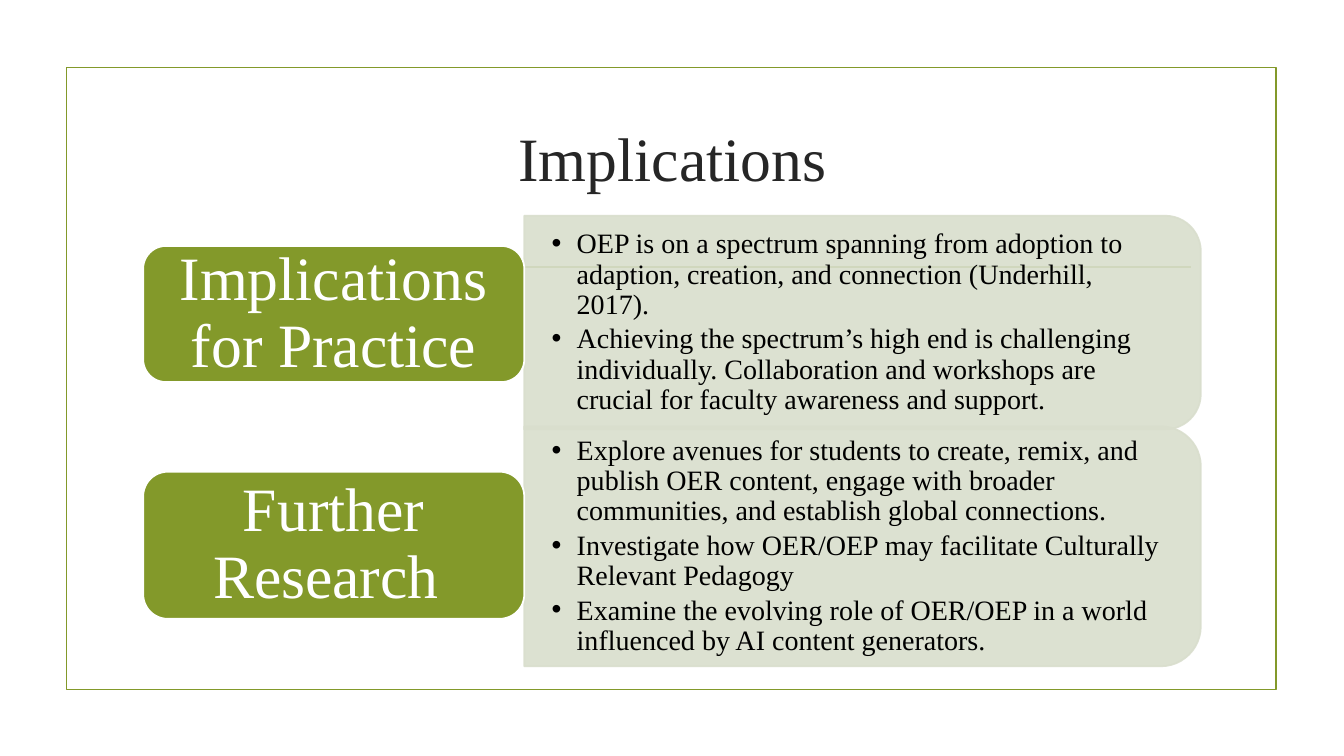
from lxml.etree import SubElement
from pptx import Presentation
from pptx.dml.color import RGBColor
from pptx.enum.shapes import MSO_CONNECTOR as CONNECTOR, MSO_SHAPE as SHAPE
from pptx.enum.text import MSO_ANCHOR as ANCHOR, PP_ALIGN as ALIGN
from pptx.oxml.ns import qn
from pptx.util import Pt

PX = 9144  # 100 px to the inch
FONT = "Times New Roman"
COLORS = {"green": "83992A", "sage": "D9DECD", "white": "FFFFFF",
          "title": "262626", "body": "000000"}

# label, label top and height, panel top and height, points
TOPICS = [
    ("Implications for Practice", 244, 135, 214, 212, [
        "OEP is on a spectrum spanning from adoption to adaption, creation, "
        "and connection (Underhill, 2017).",
        "Achieving the spectrum’s high end is challenging individually. "
        "Collaboration and workshops are crucial for faculty awareness and support."]),
    ("Further Research ", 468, 146, 423, 238, [
        "Explore avenues for students to create, remix, and publish OER content, "
        "engage with broader communities, and establish global connections.",
        "Investigate how OER/OEP may facilitate Culturally Relevant Pedagogy",
        "Examine the evolving role of OER/OEP in a world influenced by AI "
        "content generators."]),
]


def px(*lengths):
    return [round(length * PX) for length in lengths]


def rgb(name):
    return RGBColor.from_string(COLORS[name])


def set_line(line, color):
    line.color.rgb = rgb(color)
    line.width = Pt(1.25)


def add_block(slide, kind, box, fill, line):
    block = slide.shapes.add_shape(kind, *px(*box))
    block.shadow.inherit = False
    if fill:
        block.fill.solid()
        block.fill.fore_color.rgb = rgb(fill)
    else:
        block.fill.background()
    set_line(block.line, line)
    return block


def set_frame(frame, side=10, end=5):
    frame.word_wrap = True
    frame.vertical_anchor = ANCHOR.MIDDLE
    frame.margin_left, frame.margin_right, frame.margin_top, frame.margin_bottom = px(
        side, side, end, end)


def set_font(paragraph, size, color):
    paragraph.font.size = Pt(size)
    paragraph.font.name = FONT
    paragraph.font.color.rgb = rgb(color)


def add_backdrop(slide, box):
    left, top, width, _ = box
    add_block(slide, SHAPE.RECTANGLE, box, None, "green")
    rule = slide.shapes.add_connector(
        CONNECTOR.STRAIGHT, *px(left + 87, top + 198, left + width - 85, top + 198))
    set_line(rule.line, "green")
    SubElement(rule._element.spPr, qn("a:effectLst"))


def add_title(slide, box, text):
    frame = slide.shapes.add_textbox(*px(*box)).text_frame
    set_frame(frame)
    title = frame.paragraphs[0]
    title.text = text
    title.alignment = ALIGN.CENTER
    set_font(title, 44, "title")


def add_panel(slide, box, points):
    left, top, width, height = box
    # The round end faces right after a quarter turn about the centre
    shift = (width - height) / 2
    panel = add_block(slide, SHAPE.ROUND_2_SAME_RECTANGLE,
                      (left + shift, top - shift, height, width), "sage", "sage")
    panel.rotation = 90
    for color in panel._element.spPr.iter(qn("a:srgbClr")):
        SubElement(color, qn("a:alpha"), val="90000")

    # Bulleted points
    frame = slide.shapes.add_textbox(*px(left, top + 10, width - 10, height - 20)).text_frame
    set_frame(frame, 27, 14)
    for index, text in enumerate(points):
        point = frame.add_paragraph() if index else frame.paragraphs[0]
        point.text = text
        point.line_spacing = 0.9
        point.space_after = Pt(3)
        properties = point._p.get_or_add_pPr()
        properties.set("marL", str(25 * PX))
        properties.set("indent", str(-25 * PX))
        SubElement(properties, qn("a:buFont"), typeface="Arial")
        SubElement(properties, qn("a:buChar"), char="•")
        set_font(point, 20, "body")


def add_label(slide, box, text):
    frame = add_block(slide, SHAPE.ROUNDED_RECTANGLE, box, "green", "white").text_frame
    set_frame(frame, 18, 9)
    label = frame.paragraphs[0]
    label.text = text
    label.alignment = ALIGN.CENTER
    label.line_spacing = 0.9
    set_font(label, 44, "white")


def add_topics(slide, left, label_width, panel_width):
    for label, label_top, label_height, panel_top, panel_height, points in TOPICS:
        add_panel(slide, (left + label_width, panel_top, panel_width, panel_height), points)
        add_label(slide, (left, label_top, label_width, label_height), label)


def main():
    deck = Presentation()
    deck.slide_width, deck.slide_height = px(1333, 750)
    slide = deck.slides.add_slide(deck.slide_layouts[6])
    add_backdrop(slide, (66, 67, 1200, 617))
    add_title(slide, (142, 107, 1050, 98), "Implications")
    add_topics(slide, 142, 378, 671)
    deck.save("out.pptx")


if __name__ == "__main__":
    main()
